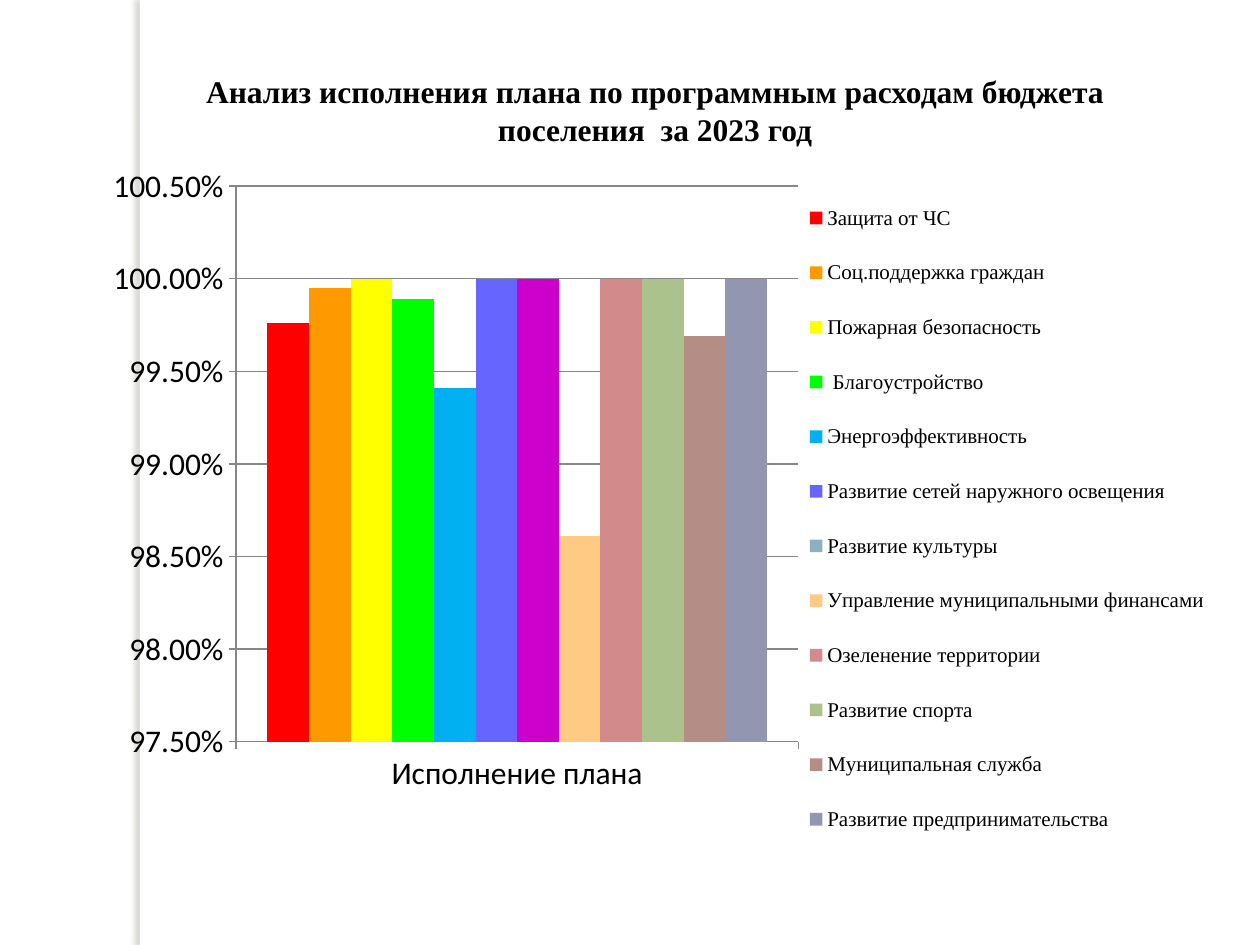
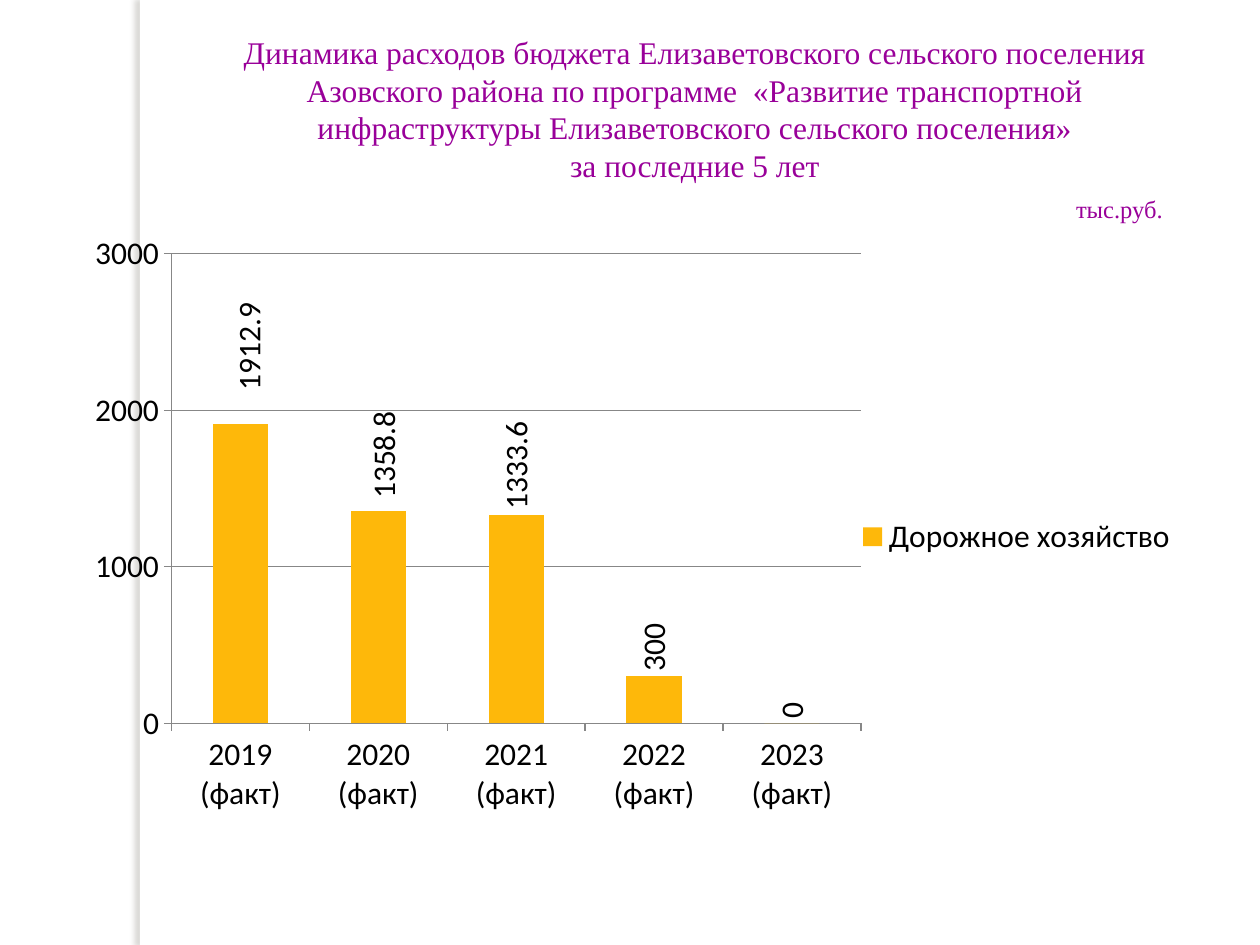
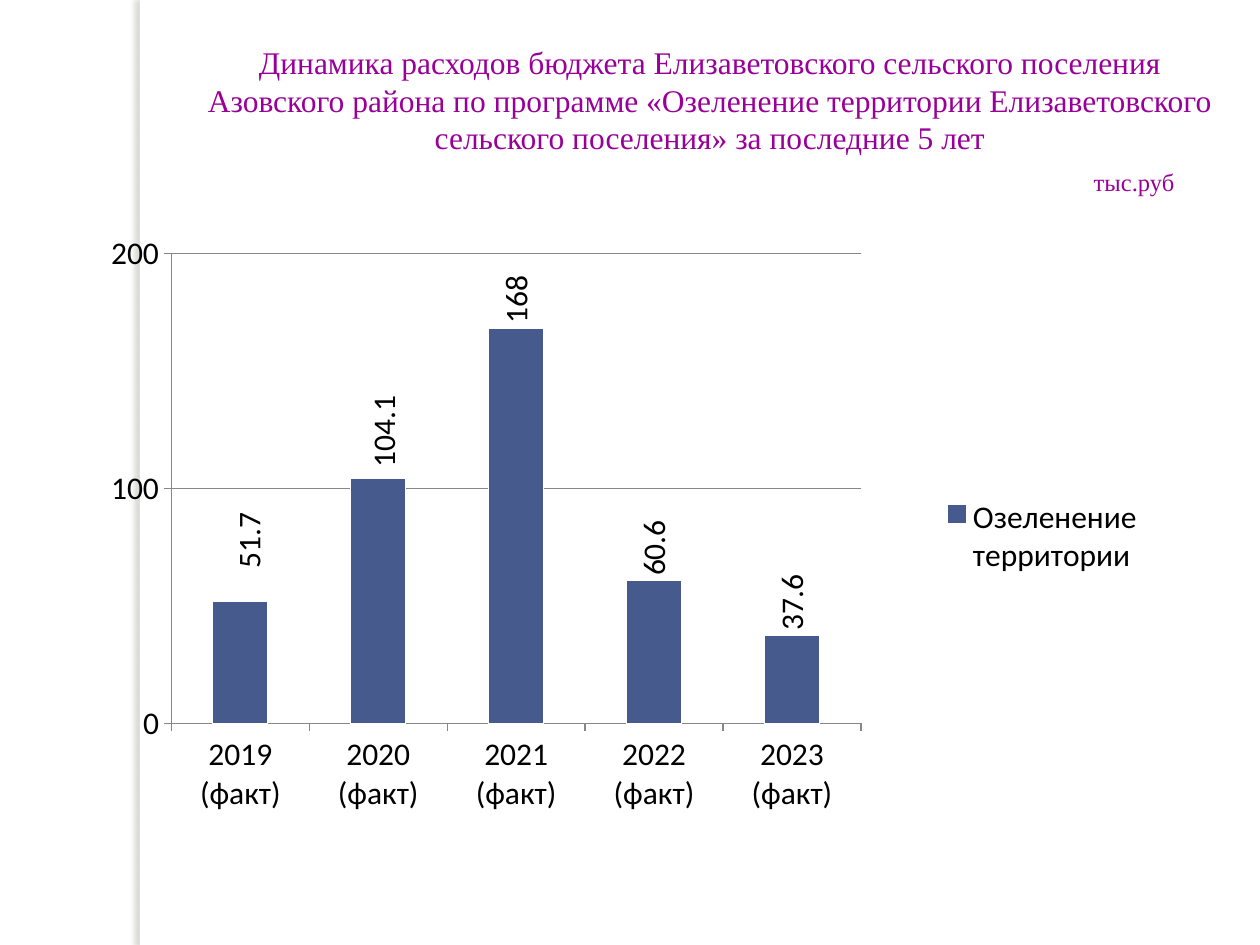
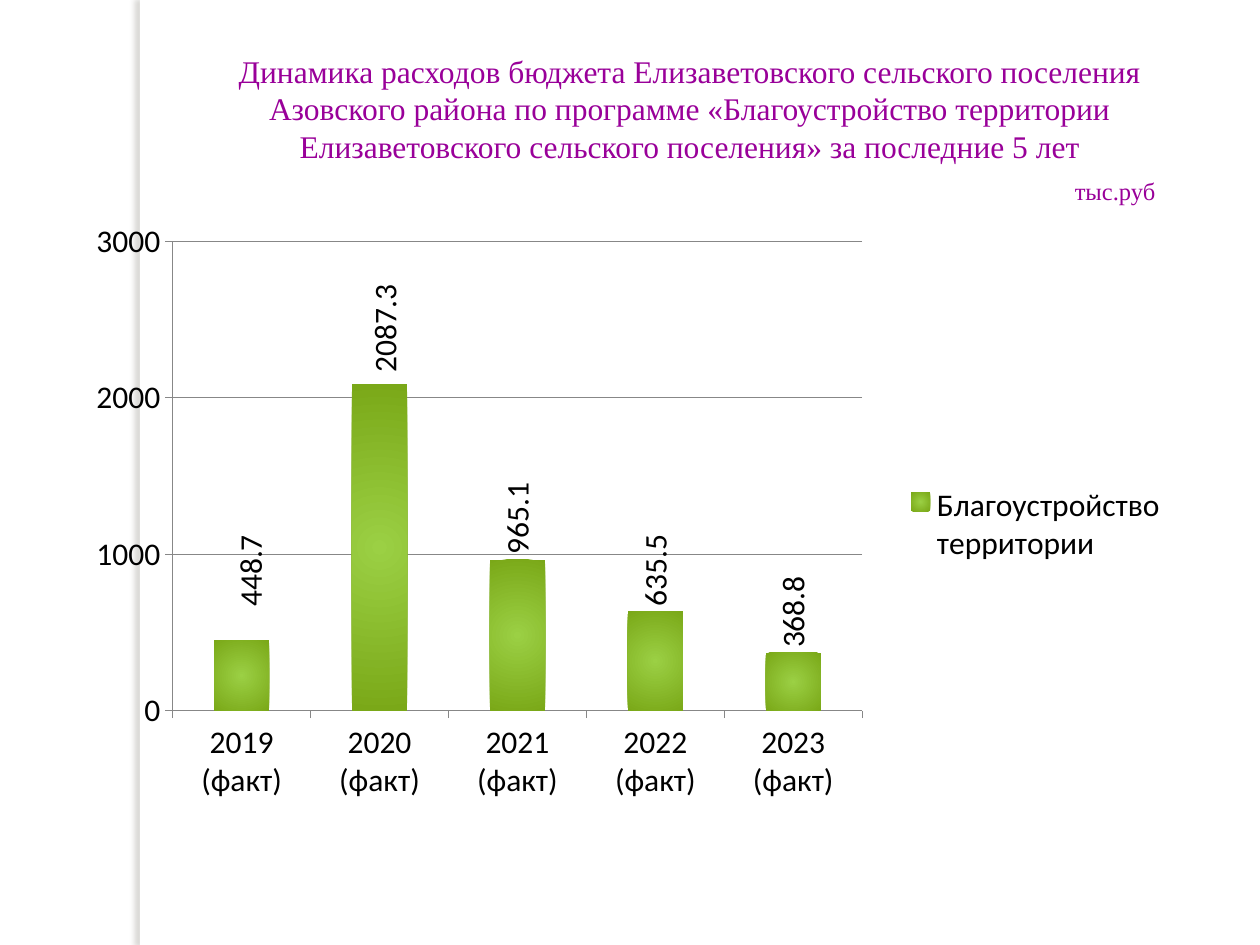
"""Builds four slides on the execution of a settlement's programme budget."""
from dataclasses import dataclass

from lxml.etree import SubElement
from pptx import Presentation
from pptx.chart.data import CategoryChartData
from pptx.dml.color import RGBColor
from pptx.enum.chart import XL_CHART_TYPE as ChartType
from pptx.enum.chart import XL_LABEL_POSITION as LabelPosition
from pptx.enum.chart import XL_LEGEND_POSITION as LegendPosition
from pptx.enum.chart import XL_TICK_LABEL_POSITION as TickLabels
from pptx.enum.chart import XL_TICK_MARK as TickMark
from pptx.enum.shapes import MSO_SHAPE as Preset
from pptx.enum.text import MSO_ANCHOR as Anchor
from pptx.enum.text import MSO_AUTO_SIZE as AutoSize
from pptx.enum.text import PP_ALIGN as Align
from pptx.oxml import parse_xml
from pptx.oxml.ns import nsdecls, qn
from pptx.util import Inches, Pt


@dataclass(frozen=True)
class Theme:
    """Colours, fonts and type sizes shared by all slides."""
    paper: str = "FFFFFF"
    ink: str = "000000"
    heading: str = "990099"
    axis: str = "878787"
    shadow: str = "736F63"
    road: str = "FEB80A"
    greening: str = "475A8D"
    upkeep_core: str = "9BD044"
    upkeep_edge: str = "7AA818"
    culture_bar: str = "CC00CC"
    serif: str = "Times New Roman"
    sans: str = "Calibri"
    text_size: int = 18
    unit_size: int = 14
    legend_size: int = 12


THEME = Theme()
WIDTH, HEIGHT = Inches(10), Inches(7.5)
COLUMNS, ROWS = 100, 75
YEARS = [f"{year} (факт)" for year in range(2019, 2024)]
PROGRAMMES = [
    ("Защита от ЧС", 0.9976, "FF0000"),
    ("Соц.поддержка граждан", 0.9995, "FF9900"),
    ("Пожарная безопасность", 1, "FFFF00"),
    (" Благоустройство", 0.9989, "00FF00"),
    ("Энергоэффективность", 0.9941, "00B0F0"),
    ("Развитие сетей наружного освещения", 1, "6666FF"),
    ("Развитие культуры", 1, "8BB0BF"),
    ("Управление муниципальными финансами", 0.9861, "FFCA84"),
    ("Озеленение территории", 1, "D38A8A"),
    ("Развитие спорта", 1, "ABC28C"),
    ("Муниципальная служба", 0.9969, "B48E84"),
    ("Развитие предпринимательства", 1, "9296B0"),
]
CULTURE = 6
DYNAMICS = "Динамика расходов бюджета Елизаветовского сельского поселения Азовского района по программе"


def color(code):
    """Turn a hex code into a colour."""
    return RGBColor.from_string(code)


def grid(left, top, width, height):
    """Turn grid columns and rows into lengths."""
    col, row = WIDTH / COLUMNS, HEIGHT / ROWS
    return int(left * col), int(top * row), int(width * col), int(height * row)


def style(font, name, size, code=THEME.ink, bold=False):
    """Set the look of a font."""
    font.name, font.size, font.bold = name, Pt(size), bold
    font.color.rgb = color(code)


def add_band(slide):
    """Move a shadowed band to the slide's layout, where all slides share it."""
    band = slide.shapes.add_shape(Preset.RECTANGLE, *grid(11.1, 0, 0.8, ROWS))
    band.fill.solid()
    band.fill.fore_color.rgb = color(THEME.paper)
    band.line.fill.background()
    band.shadow.inherit = False
    effects = band._element.spPr.find(qn("a:effectLst"))
    effects.append(parse_xml(
        f'<a:outerShdw {nsdecls("a")} blurRad="{Pt(3)}" dist="{Pt(3)}" dir="10800000">'
        f'<a:srgbClr val="{THEME.shadow}"><a:alpha val="25000"/></a:srgbClr></a:outerShdw>'))
    slide.slide_layout.shapes._spTree.insert(2, band._element)


def add_heading(slide, place, lines, code=THEME.heading, bold=False):
    """Fill the title with centred lines and return its last paragraph."""
    title = slide.shapes.title
    title.left, title.top, title.width, title.height = grid(*place)
    frame = title.text_frame
    frame.text = "\n".join(lines)
    frame.word_wrap = True
    frame.auto_size = AutoSize.SHAPE_TO_FIT_TEXT
    frame.vertical_anchor = Anchor.TOP
    for paragraph in frame.paragraphs:
        paragraph.alignment = Align.CENTER
        style(paragraph.font, THEME.serif, THEME.text_size, code, bold)
    return paragraph


def set_unit(paragraph, indent):
    """Set a paragraph as the small unit note, indented by grid columns."""
    paragraph.alignment = Align.LEFT
    paragraph.space_before = Pt(6)
    paragraph.font.size = Pt(THEME.unit_size)
    properties = paragraph._p.get_or_add_pPr()
    properties.set("marL", str(grid(indent, 0, 0, 0)[0]))
    properties.set("indent", "0")


def set_layout(parent, index, **settings):
    """Give a chart part a manual layout."""
    for layout in parent.findall(qn("c:layout")):
        parent.remove(layout)
    layout = parent.makeelement(qn("c:layout"))
    manual = SubElement(layout, qn("c:manualLayout"))
    for key, value in settings.items():
        SubElement(manual, qn(f"c:{key}")).set("val", str(value))
    parent.insert(index, layout)


def add_columns(slide, place, categories, series, scale, plot_area, legend_area=None,
                number_format="General"):
    """Add a column chart with the shared axes and a legend at the right."""
    data = CategoryChartData(number_format=number_format)
    data.categories = categories
    for name, values in series:
        data.add_series(name, values)
    chart = slide.shapes.add_chart(ChartType.COLUMN_CLUSTERED, *grid(*place), data).chart
    style(chart.font, THEME.sans, THEME.text_size)
    chart.has_title = False
    chart.has_legend = True
    chart.legend.position = LegendPosition.RIGHT
    chart.legend.include_in_layout = False
    plot = chart.plots[0]
    plot.gap_width, plot.vary_by_categories = 150, False
    values_axis = chart.value_axis
    values_axis.minimum_scale, values_axis.maximum_scale, values_axis.major_unit = scale
    values_axis.tick_labels.number_format = number_format
    values_axis.tick_labels.number_format_is_linked = False
    values_axis.has_major_gridlines = True
    for ruled in (values_axis, chart.category_axis, values_axis.major_gridlines):
        ruled.format.line.color.rgb = color(THEME.axis)
        ruled.format.line.width = Pt(0.75)
    for axis in (values_axis, chart.category_axis):
        axis.major_tick_mark = TickMark.OUTSIDE
    x, y, w, h = plot_area
    set_layout(chart._chartSpace.chart.plotArea, 0, layoutTarget="inner",
               xMode="edge", yMode="edge", x=x, y=y, w=w, h=h)
    if legend_area:
        x, y, w, h = legend_area
        set_layout(chart.legend._element, 1, xMode="edge", yMode="edge", x=x, y=y, w=w, h=h)
    return chart


def paint(part, code):
    """Fill a series or a point with one colour."""
    part.format.fill.solid()
    part.format.fill.fore_color.rgb = color(code)


def paint_radial(series, core, edge):
    """Fill a series with a gradient that runs out from the centre."""
    series.format.fill.gradient()
    old = series._element.spPr.find(qn("a:gradFill"))
    stops = "".join(f'<a:gs pos="{pos}"><a:srgbClr val="{code}"/></a:gs>'
                    for pos, code in ((0, core), (100000, edge)))
    old.getparent().replace(old, parse_xml(
        f'<a:gradFill {nsdecls("a")} rotWithShape="1"><a:gsLst>{stops}</a:gsLst>'
        '<a:path path="circle"><a:fillToRect l="50000" t="50000" r="50000" b="50000"/>'
        '</a:path></a:gradFill>'))


def label_upright(series):
    """Show upright values above the bars, the first two moved up."""
    labels = series.data_labels
    labels.show_value = True
    shifts = ((0.008, -0.047), (0.005, -0.011))
    point_labels = [series.points[index].data_label for index in range(len(shifts))]
    for label in [labels] + point_labels:
        label.position = LabelPosition.OUTSIDE_END
        style(label.font, THEME.sans, THEME.text_size)
    for body in series._element.xpath("c:dLbls//a:bodyPr"):
        body.set("rot", "-5400000")
        body.set("vert", "horz")
    for point, (x, y) in zip(series._element.xpath("c:dLbls/c:dLbl"), shifts):
        set_layout(point, 1, x=x, y=y)


def add_execution(slide):
    """Show how far each programme's plan was carried out."""
    add_heading(slide, (13.8, 5.2, 76.4, 10.1),
                ["Анализ исполнения плана по программным расходам бюджета поселения  за 2023 год"],
                code=THEME.ink, bold=True)
    chart = add_columns(slide, (6.7, 12.3, 89.8, 57.5), ["Исполнение плана"],
                        [(name, [share]) for name, share, _ in PROGRAMMES],
                        (0.975, 1.005, 0.005), (0.134, 0.043, 0.497, 0.767),
                        (0.633, 0.027, 0.365, 0.95), "0.00%")
    style(chart.legend.font, THEME.serif, THEME.legend_size)
    bars = chart.plots[0].series
    for bar, (_, _, code) in zip(bars, PROGRAMMES):
        paint(bar, code)
    paint(bars[CULTURE].points[0], THEME.culture_bar)


def add_dynamics(slide, heading_place, lines, unit_indent, chart_place, name, spending, scale,
                 legend_area=None):
    """Show five years of spending on one programme and return its bars."""
    set_unit(add_heading(slide, heading_place, lines), unit_indent)
    chart = add_columns(slide, chart_place, YEARS, [(name, spending)], scale,
                        (0.088, 0.036, 0.617, 0.77), legend_area)
    chart.category_axis.tick_label_position = TickLabels.LOW
    bars = chart.plots[0].series[0]
    label_upright(bars)
    return bars


def main():
    """Build and save the presentation."""
    deck = Presentation()
    deck.slide_width, deck.slide_height = WIDTH, HEIGHT
    title_only = deck.slide_layouts[5]
    execution, roads, greening, upkeep = [deck.slides.add_slide(title_only) for _ in range(4)]
    add_band(execution)
    add_execution(execution)

    road_bars = add_dynamics(
        roads, (14.6, 2.1, 81.1, 18.8),
        [f"{DYNAMICS}  «Развитие транспортной инфраструктуры Елизаветовского сельского поселения»",
         "за последние 5 лет", "тыс.руб."], 69.8, (5.8, 18.4, 88.7, 48.4),
        "Дорожное хозяйство", [1912.9, 1358.8, 1333.6, 300, 0], (0, 3000, 1000))
    paint(road_bars, THEME.road)

    greening_bars = add_dynamics(
        greening, (15.4, 2.9, 81.9, 13.5),
        [f"{DYNAMICS} «Озеленение территории Елизаветовского сельского поселения» за последние 5 лет",
         "тыс.руб"], 70.4, (5.8, 18.4, 88.7, 48.4),
        "Озеленение территории", [51.7, 104.1, 168, 60.6, 37.6], (0, 200, 100),
        (0.767, 0.43, 0.2, 0.14))
    paint(greening_bars, THEME.greening)
    greening_bars.format.line.color.rgb = color(THEME.paper)

    upkeep_bars = add_dynamics(
        upkeep, (13, 3.6, 83.5, 13.5),
        [f"{DYNAMICS} «Благоустройство территории Елизаветовского сельского поселения» за последние 5 лет",
         "тыс.руб"], 71.3, (5.9, 17.4, 88.7, 48.4),
        "Благоустройство территории", [448.7, 2087.3, 965.1, 635.5, 368.8], (0, 3000, 1000),
        (0.74, 0.43, 0.24, 0.14))
    paint_radial(upkeep_bars, THEME.upkeep_core, THEME.upkeep_edge)

    deck.save("out.pptx")


if __name__ == "__main__":
    main()
